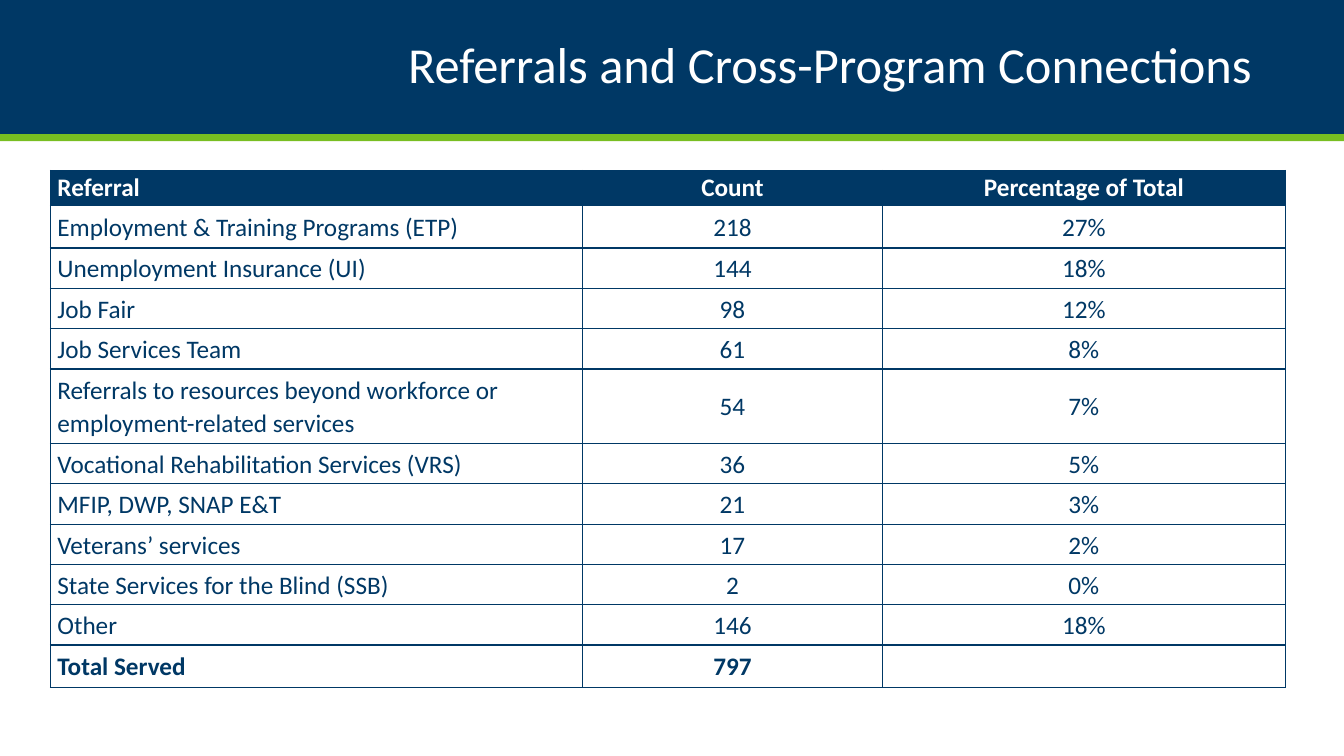
from lxml.etree import SubElement
from pptx import Presentation
from pptx.dml.color import RGBColor
from pptx.enum.shapes import MSO_SHAPE
from pptx.enum.text import MSO_ANCHOR, MSO_AUTO_SIZE, PP_ALIGN
from pptx.oxml.ns import qn
from pptx.util import Inches, Pt

FONT = "Calibri"
NAVY, GREEN, WHITE = "003865", "78BE21", "FFFFFF"
COLUMN_WIDTHS = [5.28, 2.97, 4]
ROW_HEIGHTS = [0.35, 0.42, 0.4, 0.4, 0.4, 0.74, 0.4, 0.4, 0.4, 0.4, 0.4, 0.42]
REFERRALS = [
    ("Referral", "Count", "Percentage of Total"),
    ("Employment & Training Programs (ETP)", "218", "27%"),
    ("Unemployment Insurance (UI)", "144", "18%"),
    ("Job Fair", "98", "12%"),
    ("Job Services Team", "61", "8%"),
    ("Referrals to resources beyond workforce or employment-related services", "54", "7%"),
    ("Vocational Rehabilitation Services (VRS)", "36", "5%"),
    ("MFIP, DWP, SNAP E&T", "21", "3%"),
    ("Veterans’ services", "17", "2%"),
    ("State Services for the Blind (SSB)", "2", "0%"),
    ("Other", "146", "18%"),
    ("Total Served", "797", ""),
]


def paint(color_format, color):
    """Give a fill or font colour a hex value."""
    color_format.rgb = RGBColor.from_string(color)


def fill_solid(fill, color):
    """Fill a shape or cell with one colour."""
    fill.solid()
    paint(fill.fore_color, color)


def format_paragraph(para, size, color, align, spacing, bold=False):
    """Format a paragraph and its runs."""
    para.alignment = align
    para.line_spacing = spacing
    for span in para.runs:
        span.font.name = FONT
        span.font.size = Pt(size)
        span.font.bold = bold
        paint(span.font.color, color)


def add_band(slide, top, height, color):
    """Add a full-width coloured band."""
    band = slide.shapes.add_shape(
        MSO_SHAPE.RECTANGLE, 0, Inches(top), Inches(13.33), Inches(height))
    band.shadow.inherit = False
    fill_solid(band.fill, color)
    band.line.fill.background()


def place_title(slide, text):
    """Set the title and bring it in front of the bands."""
    title = slide.shapes.title
    title.left, title.top = Inches(0.92), Inches(0)
    title.width, title.height = Inches(11.5), Inches(1.33)
    frame = title.text_frame
    frame.text = text
    frame.word_wrap = True
    frame.auto_size = MSO_AUTO_SIZE.NONE
    frame.vertical_anchor = MSO_ANCHOR.MIDDLE
    frame.margin_left = frame.margin_right = 0
    frame.margin_top = frame.margin_bottom = Inches(0.2)
    format_paragraph(frame.paragraphs[0], 36, WHITE, PP_ALIGN.RIGHT, 0.9)
    title.element.getparent().append(title.element)


def add_borders(cell, color, width):
    """Draw a line on all four sides of a cell."""
    properties = cell._tc.get_or_add_tcPr()
    for position, side in enumerate(("lnL", "lnR", "lnT", "lnB")):
        line = SubElement(properties, qn(f"a:{side}"), w=str(Pt(width)))
        fill = SubElement(line, qn("a:solidFill"))
        SubElement(fill, qn("a:srgbClr"), val=color)
        properties.insert(position, line)


def format_cell(cell, text, is_header, is_total, is_label):
    """Write and style one table cell."""
    cell.text = text
    cell.margin_left = cell.margin_right = Inches(0.07)
    cell.margin_top = cell.margin_bottom = 0
    cell.vertical_anchor = MSO_ANCHOR.TOP if is_header else MSO_ANCHOR.MIDDLE
    if is_header:
        fill_solid(cell.fill, NAVY)
    else:
        cell.fill.background()
    format_paragraph(
        cell.text_frame.paragraphs[0], 18, WHITE if is_header else NAVY,
        PP_ALIGN.LEFT if is_label else PP_ALIGN.CENTER, 1.07, is_header or is_total)
    add_borders(cell, NAVY, 1)


def add_referral_table(slide):
    """Add the table of referral counts."""
    table = slide.shapes.add_table(
        len(REFERRALS), len(COLUMN_WIDTHS), Inches(0.5), Inches(1.69),
        Inches(sum(COLUMN_WIDTHS)), Inches(sum(ROW_HEIGHTS))).table
    table.horz_banding = False
    for column, width in zip(table.columns, COLUMN_WIDTHS):
        column.width = Inches(width)
    last = len(REFERRALS) - 1
    for row, (values, height) in enumerate(zip(REFERRALS, ROW_HEIGHTS)):
        table.rows[row].height = Inches(height)
        for column, text in enumerate(values):
            format_cell(table.cell(row, column), text, row == 0, row == last, column == 0)


def main():
    """Build and save the deck."""
    deck = Presentation()
    deck.slide_width, deck.slide_height = Inches(13.33), Inches(7.5)
    slide = deck.slides.add_slide(deck.slide_layouts[5])
    add_band(slide, 0, 1.33, NAVY)
    add_band(slide, 1.33, 0.07, GREEN)
    place_title(slide, "Referrals and Cross-Program Connections")
    add_referral_table(slide)
    deck.save("out.pptx")


if __name__ == "__main__":
    main()
